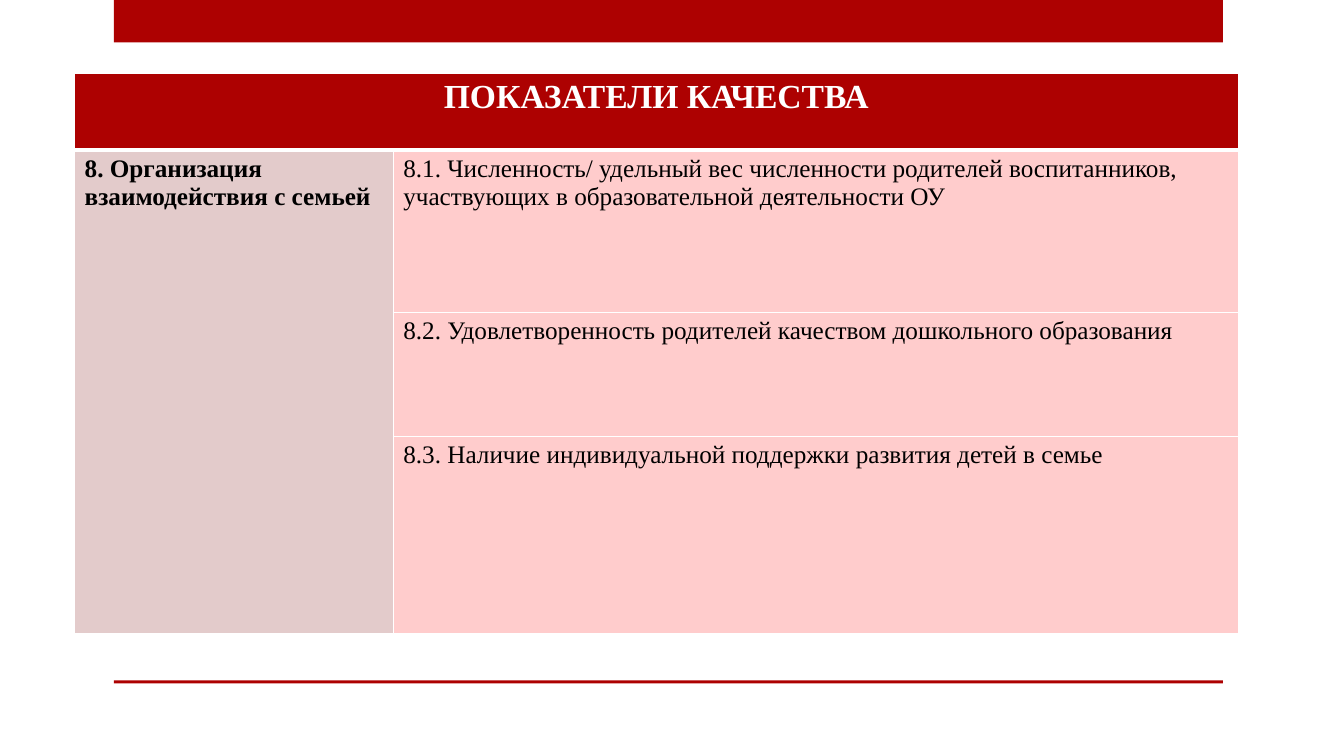
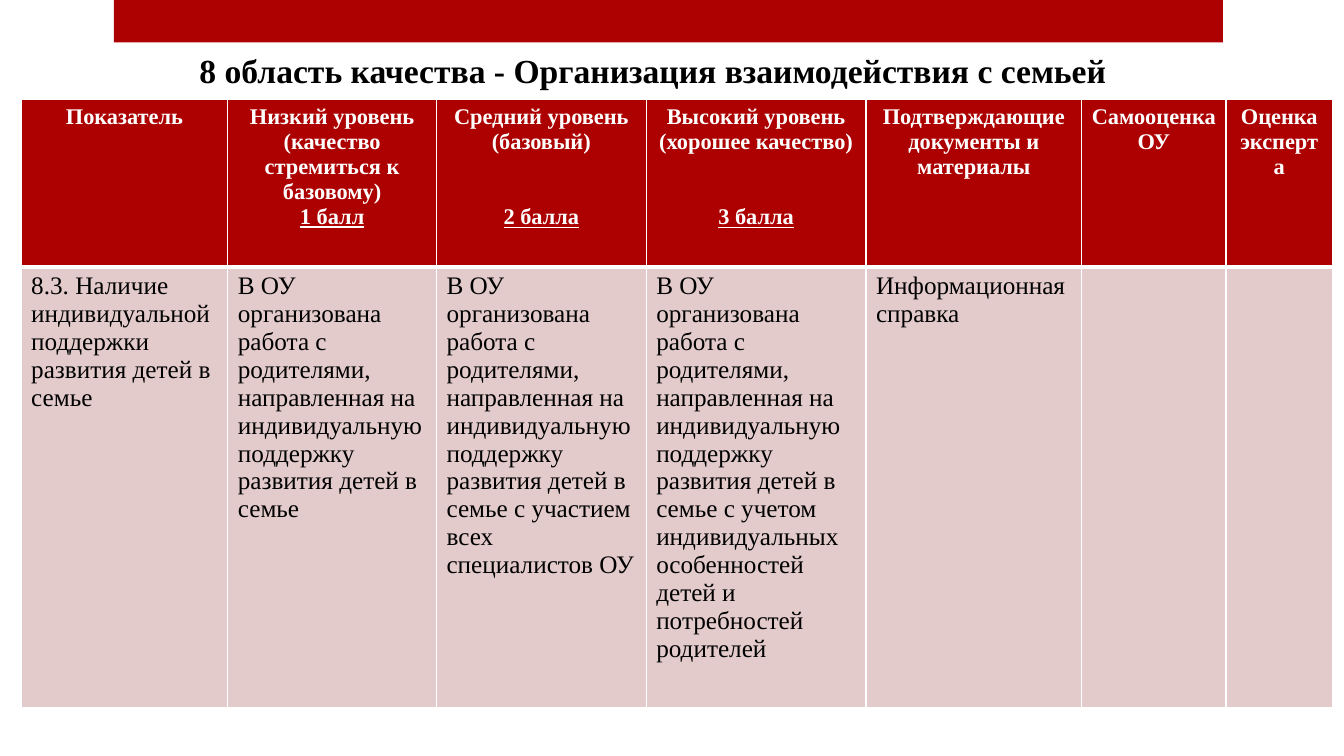
from dataclasses import dataclass

from lxml import etree
from pptx import Presentation
from pptx.dml.color import RGBColor as RGB
from pptx.enum.shapes import MSO_SHAPE as SHAPE
from pptx.enum.text import PP_ALIGN as ALIGN
from pptx.oxml.ns import qn
from pptx.util import Inches, Pt


@dataclass(frozen=True)
class Theme:
    font: str = "Times New Roman"
    red: str = "AD0101"
    rose: str = "E3CBCB"
    pink: str = "FFCCCC"
    white: str = "FFFFFF"
    black: str = "000000"
    title: int = 24
    body: int = 18
    head: int = 16
    rule: int = 1
    head_rule: int = 3


T = Theme()

INDICATORS = [
    "8.1. Численность/ удельный вес численности родителей воспитанников, "
    "участвующих в образовательной деятельности ОУ",
    "8.2. Удовлетворенность родителей качеством дошкольного образования",
    "8.3. Наличие индивидуальной поддержки развития детей в семье",
]

# Column headings: lines of text, then the score and the blank lines above it
HEADINGS = [
    (["Показатель"], None, 0),
    (["Низкий уровень", "(качество стремиться к базовому)"], "1 балл", 0),
    (["Средний уровень", "(базовый)"], "2 балла", 2),
    (["Высокий уровень", "(хорошее качество)"], "3 балла", 2),
    (["Подтверждающие документы и материалы"], None, 0),
    (["Самооценка ОУ"], None, 0),
    (["Оценка эксперта"], None, 0),
]

FAMILY_WORK = ("В ОУ организована работа с родителями, направленная на "
               "индивидуальную поддержку развития детей в семье")
LEVELS = [
    FAMILY_WORK,
    FAMILY_WORK + " с участием всех специалистов ОУ",
    FAMILY_WORK + " с учетом индивидуальных особенностей детей "
                  "и потребностей родителей",
]


# Text
def style(p, size, color=T.black, bold=False, align=ALIGN.LEFT):
    p.alignment = align
    f = p.font
    f.name, f.size, f.bold = T.font, Pt(size), bold
    f.color.rgb = RGB.from_string(color)


def write(tf, lines, size, **look):
    tf.text = "\n".join(lines)
    for p in tf.paragraphs:
        style(p, size, **look)


def add_title(slide, text):
    tf = slide.shapes.add_textbox(
        0, Inches(0.45), Inches(12.95), Inches(0.5)).text_frame
    tf.word_wrap = True
    write(tf, [text], T.title, bold=True, align=ALIGN.CENTER)


# Bands at the top and bottom of every slide
def add_bands(slide):
    for top, height in ((0, 0.42), (6.75, 0.03)):
        sp = slide.shapes.add_shape(
            SHAPE.RECTANGLE, Inches(1.13), Inches(top), Inches(11), Inches(height))
        sp.shadow.inherit = False
        sp.fill.solid()
        sp.fill.fore_color.rgb = RGB.from_string(T.red)
        sp.line.fill.background()


# Tables
def set_borders(cell, top, bottom):
    tc_pr = cell._tc.get_or_add_tcPr()
    widths = (("a:lnL", T.rule), ("a:lnR", T.rule), ("a:lnT", top), ("a:lnB", bottom))
    for i, (tag, width) in enumerate(widths):
        ln = etree.Element(qn(tag), w=str(Pt(width)))
        fill = etree.SubElement(ln, qn("a:solidFill"))
        etree.SubElement(fill, qn("a:srgbClr"), val=T.white)
        tc_pr.insert(i, ln)


def paint(cell, color):
    cell.fill.solid()
    cell.fill.fore_color.rgb = RGB.from_string(color)


def add_grid(slide, left, top, widths, heights):
    """Add a table with a red header row and white rules."""
    table = slide.shapes.add_table(
        len(heights), len(widths), Inches(left), Inches(top),
        Inches(sum(widths)), Inches(sum(heights))).table
    table.first_row = table.horz_banding = False
    for column, width in zip(table.columns, widths):
        column.width = Inches(width)
    for i, (row, height) in enumerate(zip(table.rows, heights)):
        row.height = Inches(height)
        for cell in row.cells:
            paint(cell, T.rose if i else T.red)
            set_borders(cell, T.head_rule if i == 1 else T.rule,
                        T.rule if i else T.head_rule)
    return table


def write_heading(cell, lines, size, score=None, gap=0):
    tf = cell.text_frame
    write(tf, lines + [score] if score else lines, size,
          color=T.white, bold=True, align=ALIGN.CENTER)
    if score:
        p = tf.paragraphs[-1]
        p.font.underline = True
        p.space_before = Pt(gap * size * 1.12)


# Slides
def build_indicators(slide):
    table = add_grid(slide, 0.74, 0.73, [3.16, 8.38], [0.76, 1.61, 1.23, 1.96])
    table.cell(0, 0).merge(table.cell(0, 1))
    table.cell(1, 0).merge(table.cell(3, 0))
    write_heading(table.cell(0, 0), ["ПОКАЗАТЕЛИ КАЧЕСТВА"], T.title)
    write(table.cell(1, 0).text_frame, ["8. Организация взаимодействия с семьей"],
          T.body, bold=True)
    for i, text in enumerate(INDICATORS, 1):
        cell = table.cell(i, 1)
        paint(cell, T.pink)
        write(cell.text_frame, [text], T.body)


def build_levels(slide):
    table = add_grid(slide, 0.21, 0.99,
                     [2.05, 2.07, 2.08, 2.18, 2.14, 1.43, 1.06], [1.66, 4.37])
    for cell, (lines, score, gap) in zip(table.rows[0].cells, HEADINGS):
        write_heading(cell, lines, T.head, score, gap)
    texts = [INDICATORS[-1], *LEVELS, "Информационная справка"]
    for cell, text in zip(table.rows[1].cells, texts):
        write(cell.text_frame, [text], T.body)
    add_title(slide, "8 область качества - Организация взаимодействия с семьей")


def main():
    prs = Presentation()
    prs.slide_width, prs.slide_height = Inches(13.33), Inches(7.5)
    for build in (build_indicators, build_levels):
        slide = prs.slides.add_slide(prs.slide_layouts[6])
        add_bands(slide)
        build(slide)
    prs.save("out.pptx")


if __name__ == "__main__":
    main()
